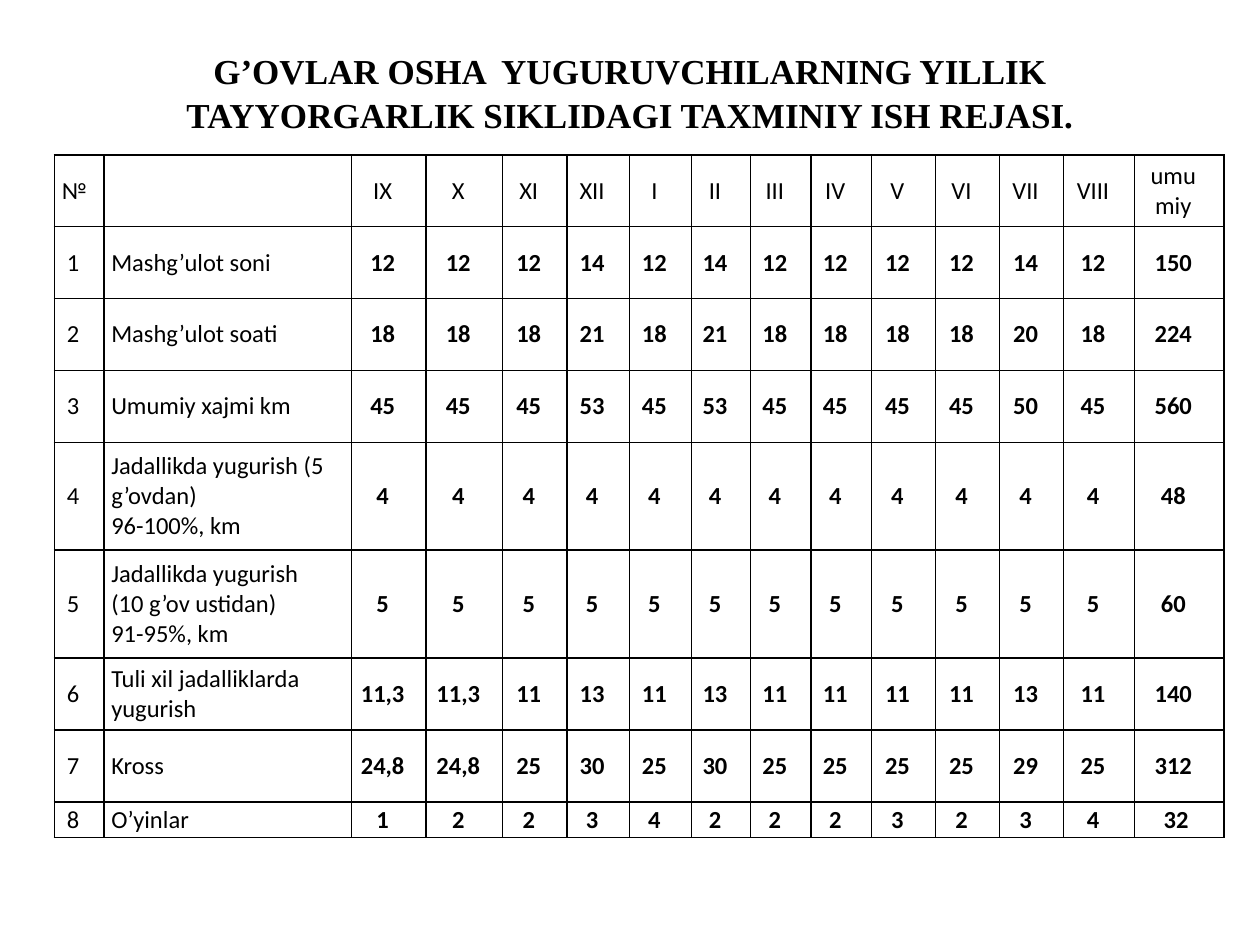
from lxml import etree
from pptx import Presentation
from pptx.dml.color import RGBColor
from pptx.enum.text import MSO_ANCHOR, PP_ALIGN
from pptx.oxml.ns import qn
from pptx.util import Pt

BLACK = RGBColor(0, 0, 0)
LEFT, CENTER = PP_ALIGN.LEFT, PP_ALIGN.CENTER
MIDDLE = MSO_ANCHOR.MIDDLE

TITLE = "G’OVLAR OSHA  YUGURUVCHILARNING YILLIK TAYYORGARLIK SIKLIDAGI TAXMINIY ISH RЕJASI."
MONTHS = "IX X XI XII I II III IV V VI VII VIII".split()
PLAN = [
    ("Mashg’ulot soni", "12 12 12 14 12 14 12 12 12 12 14 12", "150"),
    ("Mashg’ulot soati", "18 18 18 21 18 21 18 18 18 18 20 18", "224"),
    ("Umumiy xajmi km", "45 45 45 53 45 53 45 45 45 45 50 45", "560"),
    ("Jadallikda yugurish (5 g’ovdan)\n96-100%, km", "4 4 4 4 4 4 4 4 4 4 4 4", "48"),
    ("Jadallikda yugurish (10 g’ov ustidan)\n91-95%, km", "5 5 5 5 5 5 5 5 5 5 5 5", "60"),
    ("Tuli xil jadalliklarda yugurish", "11,3 11,3 11 13 11 13 11 11 11 11 13 11", "140"),
    ("Kross", "24,8 24,8 25 30 25 30 25 25 25 25 29 25", "312"),
    ("O’yinlar", "1 2 2 3 4 2 2 2 3 2 3 4", " 32"),
]
WIDTHS = [28.3, 141.6, 42.5, 43.9, 36.7, 35.7, 35.5, 33.8, 34.6, 34.5, 36.6, 36.6, 36.6, 40.5, 51.3]
ROW = 41.1
HEIGHTS = [ROW] * 4 + [ROW * 1.5] * 2 + [ROW] * 2 + [ROW / 2]


def style(para, name, size, bold, align):
    para.alignment = align
    font = para.font
    font.name, font.size, font.bold = name, Pt(size), bold
    font.color.rgb = BLACK


def add_title(slide):
    frame = slide.shapes.add_textbox(Pt(36), Pt(21.6), Pt(648), Pt(61.2)).text_frame
    frame.word_wrap = True
    frame.vertical_anchor = MIDDLE
    frame.text = TITLE
    para = frame.paragraphs[0]
    para.line_spacing = 1.04
    style(para, "Times New Roman", 20, True, CENTER)


def add_edges(cell):
    props = cell._tc.get_or_add_tcPr()
    for side in ("lnL", "lnR", "lnT", "lnB"):
        line = etree.SubElement(props, qn(f"a:{side}"), w=str(Pt(1)))
        fill = etree.SubElement(line, qn("a:solidFill"))
        etree.SubElement(fill, qn("a:srgbClr"), val=str(BLACK))


def fill_cell(cell, text, bold, align):
    add_edges(cell)
    cell.fill.background()
    cell.vertical_anchor = MIDDLE
    cell.margin_left, cell.margin_right = Pt(4.3), Pt(11.2)
    cell.margin_top = cell.margin_bottom = 0
    cell.text = text
    for para in cell.text_frame.paragraphs:
        style(para, "Calibri", 14, bold, align)


def add_plan(slide):
    rows = [["№", "", *MONTHS, "umumiy"]]
    for num, (label, loads, total) in enumerate(PLAN, 1):
        rows.append([str(num), label, *loads.split(), total])
    table = slide.shapes.add_table(
        len(rows), len(WIDTHS), Pt(31), Pt(88.5), Pt(sum(WIDTHS)), Pt(sum(HEIGHTS))
    ).table
    table.first_row = table.horz_banding = False
    for col, width in zip(table.columns, WIDTHS):
        col.width = Pt(width)
    for r, (row, height) in enumerate(zip(rows, HEIGHTS)):
        table.rows[r].height = Pt(height)
        for c, text in enumerate(row):
            fill_cell(table.cell(r, c), text, r > 0 and c > 1, LEFT if c == 1 else CENTER)


def main():
    deck = Presentation()
    deck.slide_width, deck.slide_height = Pt(720), Pt(540)
    slide = deck.slides.add_slide(deck.slide_layouts[6])
    add_title(slide)
    add_plan(slide)
    deck.save("out.pptx")


if __name__ == "__main__":
    main()
